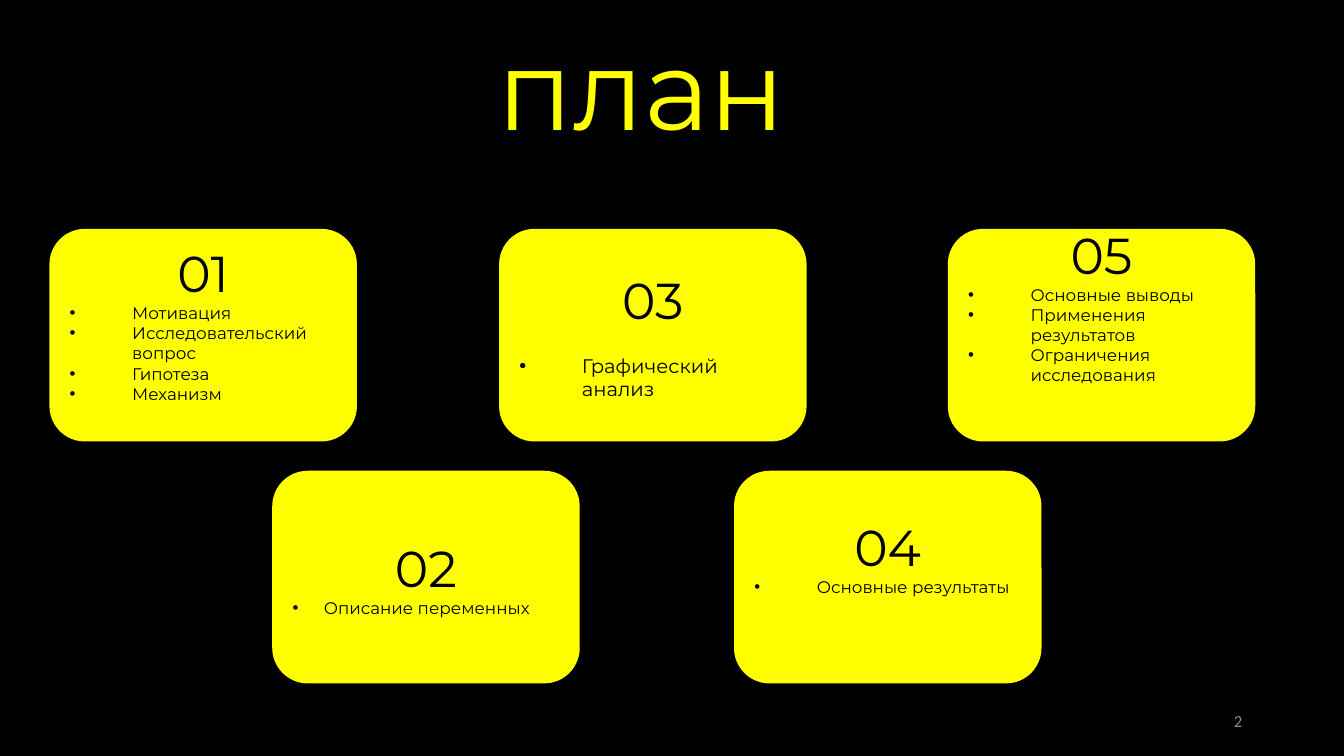
"""Build the plan slide: a title and five numbered cards."""
from dataclasses import dataclass

from lxml.etree import SubElement
from pptx import Presentation
from pptx.dml.color import RGBColor
from pptx.enum.shapes import MSO_SHAPE as Shape
from pptx.enum.text import MSO_ANCHOR as Anchor, PP_ALIGN as Align
from pptx.oxml.ns import qn
from pptx.util import Inches, Pt

YELLOW, BLACK, GREY = "FFFF00", "000000", "8C8C8C"
FONT = "Montserrat"
WIDTH, HEIGHT = 3.05, 2.11
UPPER, LOWER = 2.27, 4.67


@dataclass
class Card:
    left: float
    top: float
    items: list[str]
    size: int = 12
    indent: float = 0.62
    gap: int = 0
    base: float = 0.05


CARDS = [
    Card(0.49, UPPER, ["Мотивация", "Исследовательский вопрос", "Гипотеза", "Механизм"], base=0.29),
    Card(2.7, LOWER, ["Описание переменных"], indent=0.31),
    Card(4.95, UPPER, ["Графический анализ"], size=14, gap=17),
    Card(7.28, LOWER, ["Основные результаты"], base=0.46),
    Card(9.4, UPPER, ["Основные выводы", "Применения результатов", "Ограничения исследования"], base=0.66),
]


def color(code: str) -> RGBColor:
    return RGBColor.from_string(code)


def style(para, size: int, code: str, align=Align.LEFT, face: str = FONT) -> None:
    para.alignment = align
    para.font.name = face
    para.font.size = Pt(size)
    para.font.color.rgb = color(code)


def bullet(para, indent: float) -> None:
    props = para._p.get_or_add_pPr()
    props.set("marL", str(Inches(indent)))
    props.set("indent", str(-Inches(indent)))
    SubElement(props, qn("a:buFont")).set("typeface", "Arial")
    SubElement(props, qn("a:buChar")).set("char", "•")


def label(slide, box: tuple[float, ...], text: str):
    frame = slide.shapes.add_textbox(*map(Inches, box)).text_frame
    frame.word_wrap = True
    frame.vertical_anchor = Anchor.MIDDLE
    para = frame.paragraphs[0]
    para.text = text
    return para


def draw(slide, card: Card, number: int) -> None:
    box = map(Inches, (card.left, card.top, WIDTH, HEIGHT))
    shape = slide.shapes.add_shape(Shape.ROUNDED_RECTANGLE, *box)
    shape.shadow.inherit = False
    shape.fill.solid()
    shape.fill.fore_color.rgb = color(YELLOW)
    shape.line.fill.background()
    frame = shape.text_frame
    frame.word_wrap = True
    frame.vertical_anchor = Anchor.MIDDLE
    frame.margin_bottom = Inches(card.base)
    head = frame.paragraphs[0]
    head.text = f"{number:02}"
    style(head, 36, BLACK, Align.CENTER)
    head.space_after = Pt(card.gap)
    for item in card.items:
        para = frame.add_paragraph()
        para.text = item
        style(para, card.size, BLACK)
        bullet(para, card.indent)


def main() -> None:
    deck = Presentation()
    deck.slide_width, deck.slide_height = Inches(13.33), Inches(7.5)
    slide = deck.slides.add_slide(deck.slide_layouts[6])
    slide.background.fill.solid()
    slide.background.fill.fore_color.rgb = color(BLACK)
    title = label(slide, (4.84, 0.21, 3.27, 1.45), "план")
    style(title, 80, YELLOW)
    title.line_spacing = 0.9
    for number, card in enumerate(CARDS, 1):
        draw(slide, card, number)
    page = label(slide, (9.42, 6.95, 3, 0.4), "2")
    style(page, 12, GREY, Align.RIGHT, "Calibri")
    deck.save("out.pptx")


if __name__ == "__main__":
    main()
